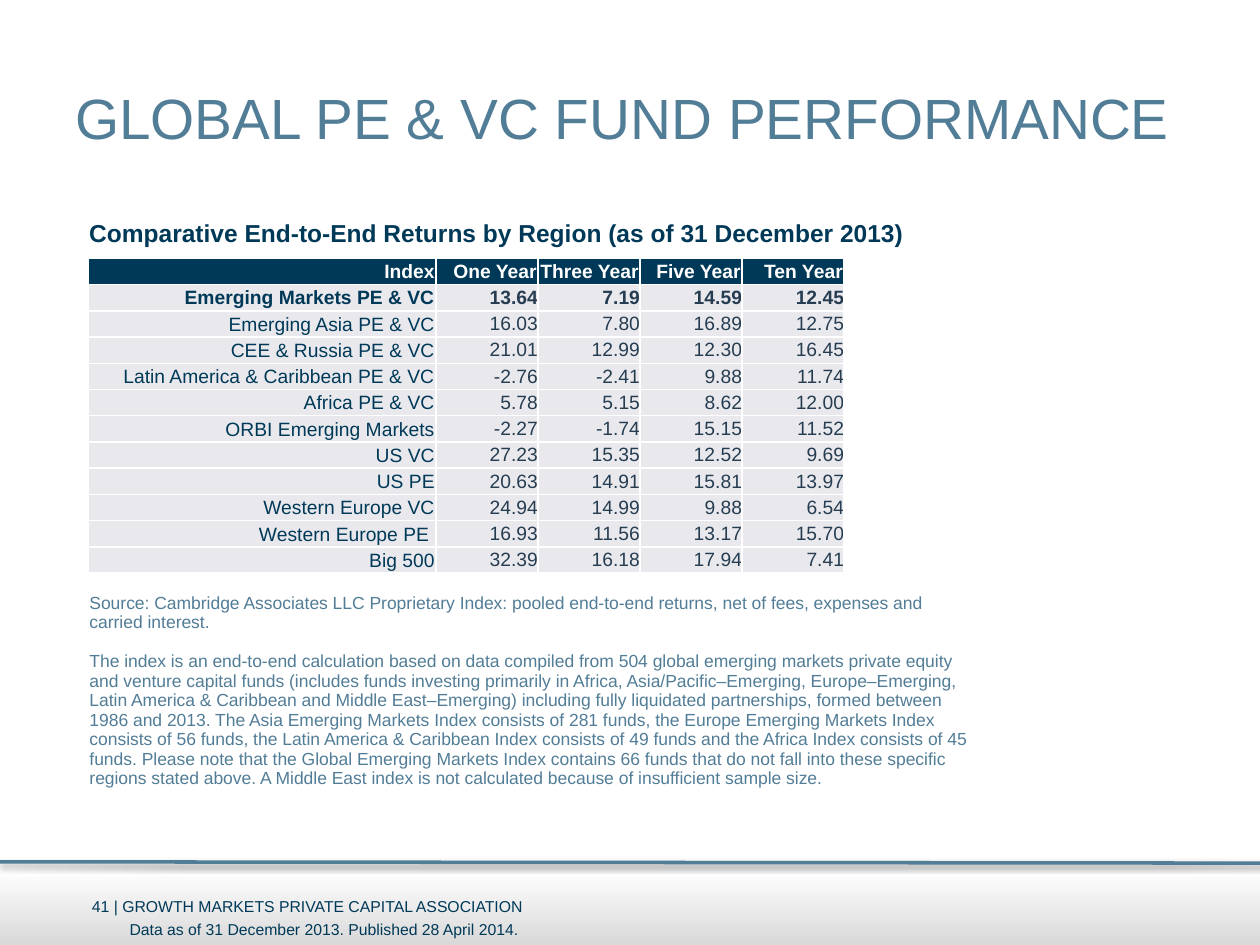
import pptx
import pptx.util
import pptx.dml.color
import pptx.enum.shapes
import pptx.enum.text
import pptx.oxml
import pptx.oxml.ns
from pptx.util import Inches

NAVY, TEAL, SLATE = "003958", "527D97", "263D51"
WHITE, PALE, GREY = "FFFFFF", "E9E9ED", "D9D9D9"
MID = pptx.enum.text.MSO_ANCHOR.MIDDLE
LOW = pptx.enum.text.MSO_ANCHOR.BOTTOM
RIGHT = pptx.enum.text.PP_ALIGN.RIGHT
HAIR = (0.01, 0.01, 0.01, 0)
NONE = (0, 0, 0, 0)

HEAD = ["Index", "One Year", "Three Year", "Five Year", "Ten Year"]
ROWS = [
    ["Emerging Markets PE & VC", "13.64", "7.19", "14.59", "12.45"],
    ["Emerging Asia PE & VC", "16.03", "7.80", "16.89", "12.75"],
    ["CEE & Russia PE & VC", "21.01", "12.99", "12.30", "16.45"],
    ["Latin America & Caribbean PE & VC", "-2.76", "-2.41", "9.88", "11.74"],
    ["Africa PE & VC", "5.78", "5.15", "8.62", "12.00"],
    ["ORBI Emerging Markets", "-2.27", "-1.74", "15.15", "11.52"],
    ["US VC", "27.23", "15.35", "12.52", "9.69"],
    ["US PE", "20.63", "14.91", "15.81", "13.97"],
    ["Western Europe VC", "24.94", "14.99", "9.88", "6.54"],
    ["Western Europe PE ", "16.93", "11.56", "13.17", "15.70"],
    ["Big 500", "32.39", "16.18", "17.94", "7.41"],
]
NOTES = [
    "Source: Cambridge Associates LLC Proprietary Index: pooled end-to-end "
    "returns, net of fees, expenses and carried interest.",
    "The index is an end-to-end calculation based on data compiled from 504 "
    "global emerging markets private equity and venture capital funds "
    "(includes funds investing primarily in Africa, Asia/Pacific–Emerging, "
    "Europe–Emerging, Latin America & Caribbean and Middle East–Emerging) "
    "including fully liquidated partnerships, formed between 1986 and 2013. "
    "The Asia Emerging Markets Index consists of 281 funds, the Europe "
    "Emerging Markets Index consists of 56 funds, the Latin America & "
    "Caribbean Index consists of 49 funds and the Africa Index consists of "
    "45 funds. Please note that the Global Emerging Markets Index contains "
    "66 funds that do not fall into these specific regions stated above. "
    "A Middle East index is not calculated because of insufficient sample "
    "size.",
]


def paint(code):
    return pptx.dml.color.RGBColor.from_string(code)


def node(xml):
    return pptx.oxml.parse_xml(xml.replace(">", f" {pptx.oxml.ns.nsdecls('a')}>", 1))


class Deck:
    font = "Arial"

    def __init__(self, slide):
        self.slide = slide

    def run(self, para, text, size, color, bold=False):
        run = para.add_run()
        run.text = text
        run.font.name = self.font
        run.font.size = pptx.util.Pt(size)
        run.font.bold = bold
        run.font.color.rgb = paint(color)

    def text(self, at, text, size, color, bold=False, mid=False, left=0.1):
        box = self.slide.shapes.add_textbox(*map(Inches, at)).text_frame
        box.word_wrap = True
        box.margin_left = Inches(left)
        if mid:
            box.vertical_anchor = MID
        self.run(box.paragraphs[0], text, size, color, bold)

    def band(self, at):
        kind = pptx.enum.shapes.MSO_SHAPE.RECTANGLE
        box = self.slide.shapes.add_shape(kind, *map(Inches, at))
        box.shadow.inherit = False
        box.line.fill.background()
        box.fill.gradient()
        box.fill.gradient_angle = 90
        stops = zip(box.fill.gradient_stops, [(0, GREY), (0.74, WHITE)])
        for stop, (place, color) in stops:
            stop.position = place
            stop.color.rgb = paint(color)

    def rule(self, start, end, color, width):
        kind = pptx.enum.shapes.MSO_CONNECTOR.STRAIGHT
        line = self.slide.shapes.add_connector(kind, *map(Inches, start + end))
        line.line.color.rgb = paint(color)
        line.line.width = pptx.util.Pt(width)
        line._element.spPr.append(node(
            '<a:effectLst><a:outerShdw blurRad="39370" dist="20320" '
            'dir="5400000" rotWithShape="0"><a:srgbClr val="000000">'
            '<a:alpha val="38000"/></a:srgbClr></a:outerShdw></a:effectLst>'))

    def grid(self, at, cols, rows):
        size = (rows, len(cols))
        table = self.slide.shapes.add_table(*size, *map(Inches, at)).table
        table.first_row = table.horz_banding = False
        for col, width in zip(table.columns, cols):
            col.width = Inches(width)
        return table

    def cell(self, cell, pad, anchor, fill=None):
        (cell.margin_left, cell.margin_top,
         cell.margin_right, cell.margin_bottom) = map(Inches, pad)
        cell.vertical_anchor = anchor
        if not fill:
            cell.fill.background()
            return
        # Borders must come before the fill
        for side in ("lnL", "lnR", "lnT", "lnB"):
            cell._tc.get_or_add_tcPr().append(node(
                f'<a:{side} w="12700"><a:solidFill><a:srgbClr val="{WHITE}"/>'
                f'</a:solidFill></a:{side}>'))
        cell.fill.solid()
        cell.fill.fore_color.rgb = paint(fill)


def main():
    prs = pptx.Presentation()
    prs.slide_width, prs.slide_height = Inches(10), Inches(7.5)
    deck = Deck(prs.slides.add_slide(prs.slide_layouts[6]))

    # Footer band
    deck.band((0, 6.69, 10, 0.81))
    deck.rule((0, 6.84), (10.01, 6.85), TEAL, 2)
    deck.text((0.73, 7.07, 6.68, 0.25),
              "41 | GROWTH MARKETS PRIVATE CAPITAL ASSOCIATION",
              9, NAVY, mid=True, left=0)

    # Title
    deck.text((0.5, 0.3, 9, 1.25), "GLOBAL PE & VC FUND PERFORMANCE",
              32.4, TEAL, mid=True)

    # Returns table
    table = deck.grid((0.7, 2.05, 6, 2.5), [2.76] + [0.81] * 4, len(ROWS) + 1)
    for r, row in enumerate([HEAD] + ROWS):
        for c, value in enumerate(row):
            cell = table.cell(r, c)
            pad = HAIR if r == 0 or c == 0 else NONE
            deck.cell(cell, pad, MID, PALE if r else NAVY)
            color = WHITE if r == 0 else SLATE if c else NAVY
            para = cell.text_frame.paragraphs[0]
            para.alignment = RIGHT
            deck.run(para, value, 11, color, bold=r < 2)

    # Table heading
    deck.text((0.61, 1.68, 6.7, 0.34),
              "Comparative End-to-End Returns by Region (as of 31 December 2013)",
              14, NAVY, bold=True)

    # Source notes
    cell = deck.grid((0.7, 4.58, 7.08, 1.68), [7.08], 1).cell(0, 0)
    deck.cell(cell, HAIR, LOW)
    first = cell.text_frame.paragraphs[0]
    second = cell.text_frame.add_paragraph()
    second.space_before = pptx.util.Pt(11.2)
    for para, note in zip((first, second), NOTES):
        deck.run(para, note, 10, TEAL)

    # Date line
    deck.text((0.93, 7.25, 3.54, 0.25),
              "Data as of 31 December 2013. Published 28 April 2014.", 9, NAVY)

    prs.save("out.pptx")


if __name__ == "__main__":
    main()
